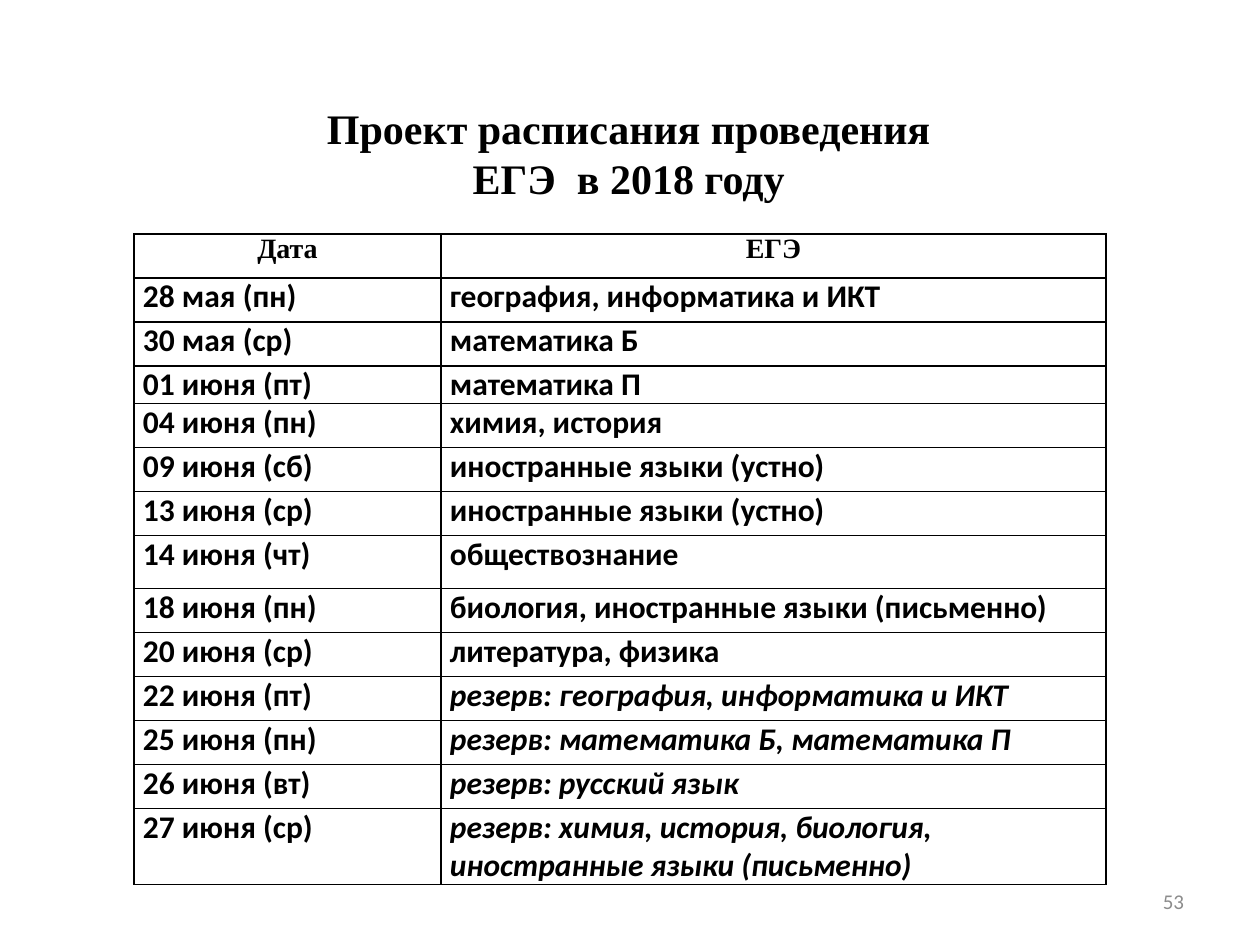
from lxml.etree import SubElement
from pptx import Presentation
from pptx.dml.color import RGBColor
from pptx.enum.text import MSO_ANCHOR as Anchor, PP_ALIGN as Align
from pptx.oxml.ns import qn
from pptx.util import Emu, Pt

PX_PER_INCH = 126
SERIF, SANS = "Times New Roman", "Calibri"
BLACK, GREY, WHITE = "000000", "8C8C8C", "FFFFFF"


def px(length):
    return Emu(round(length * 914400 / PX_PER_INCH))


def color(code):
    return RGBColor.from_string(code)


class SlideBuilder:
    cell_inset = 9
    border_width = Pt(1)

    def __init__(self, page):
        self.page = page

    def style(self, frame, size, font, ink=BLACK, bold=True, italic=False, align=Align.LEFT):
        for para in frame.paragraphs:
            para.alignment = align
            for span in para.runs:
                span.font.size = Pt(size)
                span.font.name = font
                span.font.bold = bold
                span.font.italic = italic
                span.font.color.rgb = color(ink)

    def text(self, left, top, width, height, words, anchor=Anchor.TOP, right_inset=13, **look):
        box = self.page.shapes.add_textbox(px(left), px(top), px(width), px(height))
        frame = box.text_frame
        frame.word_wrap = True
        frame.vertical_anchor = anchor
        frame.margin_right = px(right_inset)
        frame.text = words
        self.style(frame, **look)

    def border(self, cell):
        properties = cell._tc.get_or_add_tcPr()
        for position, side in enumerate(("a:lnL", "a:lnR", "a:lnT", "a:lnB")):
            line = SubElement(properties, qn(side), w=str(self.border_width))
            fill = SubElement(line, qn("a:solidFill"))
            SubElement(fill, qn("a:srgbClr"), val=BLACK)
            properties.insert(position, line)

    def cell(self, cell, words, **look):
        cell.margin_left = cell.margin_right = px(self.cell_inset)
        cell.margin_top = cell.margin_bottom = 0
        cell.fill.solid()
        cell.fill.fore_color.rgb = color(WHITE)
        self.border(cell)
        cell.text = words
        self.style(cell.text_frame, **look)

    def table(self, left, top, widths, heights, header, rows):
        table = self.page.shapes.add_table(
            len(heights), len(widths), px(left), px(top), px(sum(widths)), px(sum(heights))
        ).table
        for column, width in zip(table.columns, widths):
            column.width = px(width)
        for row, height in zip(table.rows, heights):
            row.height = px(height)
        for index, title in enumerate(header):
            self.cell(table.cell(0, index), title, size=16, font=SERIF, align=Align.CENTER)
        for number, (date, exams) in enumerate(rows, 1):
            self.cell(table.cell(number, 0), date, size=18, font=SANS)
            self.cell(table.cell(number, 1), exams, size=18, font=SANS,
                      italic=exams.startswith("резерв"))


SCHEDULE = [
    ("28 мая (пн)", "география, информатика и ИКТ"),
    ("30 мая (ср)", "математика Б"),
    ("01 июня (пт)", "математика П"),
    ("04 июня (пн)", "химия, история"),
    ("09 июня (сб)", "иностранные языки (устно)"),
    ("13 июня (ср)", "иностранные языки (устно)"),
    ("14 июня (чт)", "обществознание"),
    ("18 июня (пн)", "биология, иностранные языки (письменно)"),
    ("20 июня (ср)", "литература, физика"),
    ("22 июня (пт)", "резерв: география, информатика и ИКТ"),
    ("25 июня (пн)", "резерв: математика Б, математика П"),
    ("26 июня (вт)", "резерв: русский язык"),
    ("27 июня (ср)", "резерв: химия, история, биология, иностранные языки (письменно)"),
]


def main():
    deck = Presentation()
    deck.slide_width, deck.slide_height = px(1260), px(945)
    builder = SlideBuilder(deck.slides.add_slide(deck.slide_layouts[6]))

    # Page number
    builder.text(903, 876, 294, 50, "53", anchor=Anchor.MIDDLE,
                 size=12, font=SANS, ink=GREY, bold=False, align=Align.RIGHT)

    # Title, centred slightly left of the middle of its box
    builder.text(134, 96, 1012, 115, "Проект расписания проведения\nЕГЭ  в 2018 году",
                 right_inset=35, size=24, font=SERIF, align=Align.CENTER)

    # Exam schedule: equal rows but for three
    heights = [44] * (len(SCHEDULE) + 1)
    heights[3], heights[7], heights[-1] = 36, 53, 76
    builder.table(134, 234, [307, 665], heights, ["Дата", "ЕГЭ"], SCHEDULE)

    deck.save("out.pptx")


if __name__ == "__main__":
    main()
